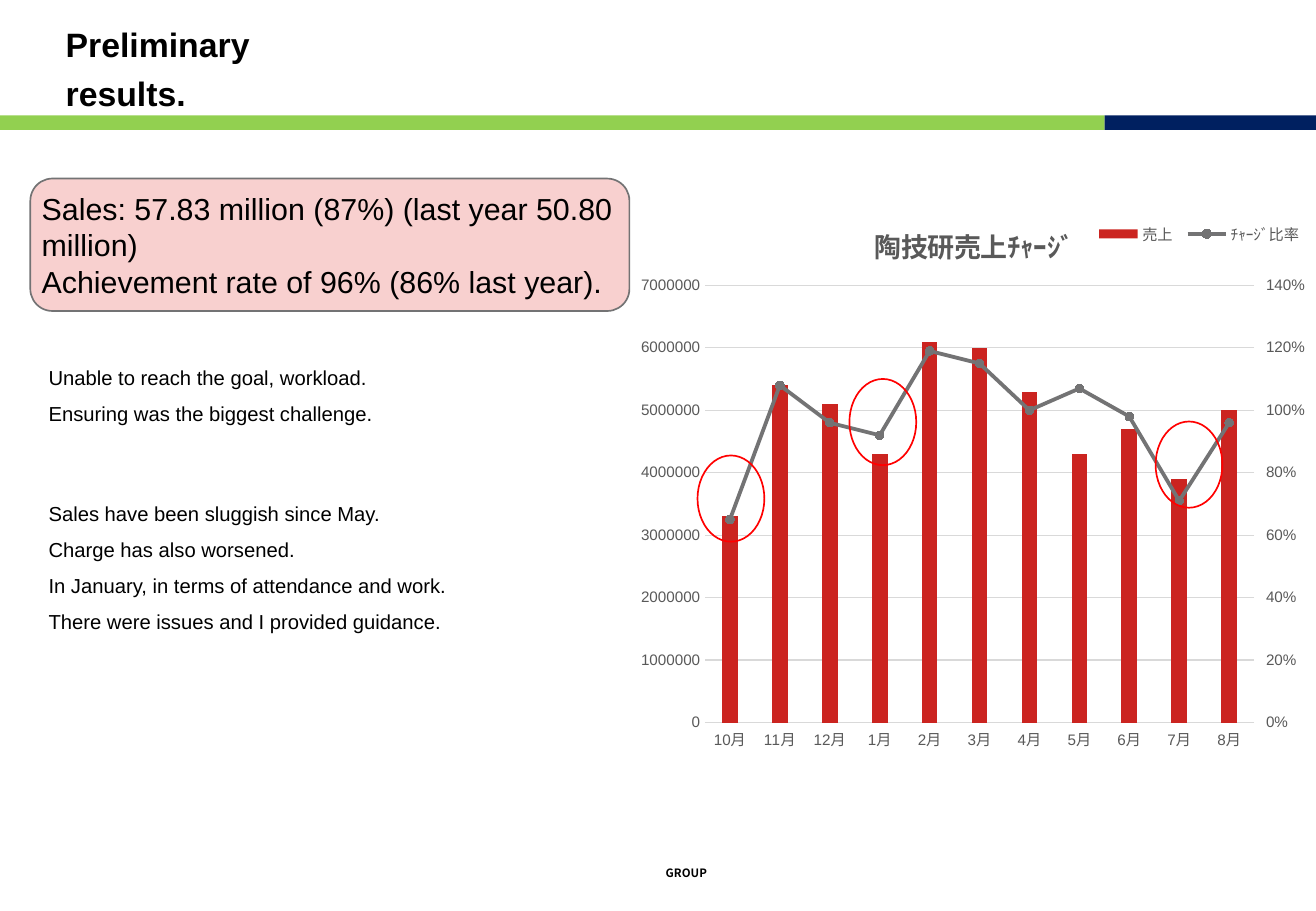
from pptx import Presentation
from pptx.chart.data import CategoryChartData
from pptx.dml.color import RGBColor
from pptx.enum.chart import XL_CHART_TYPE, XL_LEGEND_POSITION, XL_MARKER_STYLE, XL_TICK_MARK
from pptx.enum.shapes import MSO_SHAPE
from pptx.enum.text import MSO_ANCHOR, PP_ALIGN
from pptx.oxml import parse_xml
from pptx.oxml.ns import nsdecls, qn
from pptx.util import Inches, Pt

RECT, ROUND_RECT, ELLIPSE = MSO_SHAPE.RECTANGLE, MSO_SHAPE.ROUNDED_RECTANGLE, MSO_SHAPE.OVAL
TOP, MIDDLE, BOTTOM = MSO_ANCHOR.TOP, MSO_ANCHOR.MIDDLE, MSO_ANCHOR.BOTTOM
LEFT, JUSTIFY = PP_ALIGN.LEFT, PP_ALIGN.JUSTIFY
COLUMNS = XL_CHART_TYPE.COLUMN_CLUSTERED
CIRCLE = XL_MARKER_STYLE.CIRCLE
NO_TICK = XL_TICK_MARK.NONE
LEGEND_BOTTOM = XL_LEGEND_POSITION.BOTTOM

FONT, CJK_FONT = "Arial", "Noto Sans CJK JP"
BLACK, GRAY, LIGHT, DARK = "000000", "737374", "D9D9D9", "595959"
RED = "CB2420"

MONTHS = ["10月", "11月", "12月", "1月", "2月", "3月", "4月", "5月", "6月", "7月", "8月"]
SALES = [3300000, 5400000, 5100000, 4300000, 6100000, 6000000,
         5300000, 4300000, 4700000, 3900000, 5000000]
CHARGE = [0.65, 1.08, 0.96, 0.92, 1.19, 1.15, 1, 1.07, 0.98, 0.71, 0.96]

SUMMARY = ["Sales: 57.83 million (87%) (last year 50.80 million)",
           "Achievement rate of 96% (86% last year)."]
COMMENTS = ["Unable to reach the goal, workload.",
            "Ensuring was the biggest challenge.",
            "Sales have been sluggish since May.",
            "Charge has also worsened.",
            "In January, in terms of attendance and work.",
            "There were issues and I provided guidance."]
LOW_MONTHS = [(6.99, 3.12), (5.74, 3.75), (9.51, 3.47)]


def rgb(color):
    return RGBColor.from_string(color)


def style_font(font, size, color=BLACK, bold=False, name=FONT):
    font.name, font.size, font.bold = name, Pt(size), bold
    font.color.rgb = rgb(color)


def add_shape(s, kind, box, fill=None, line=None):
    sp = s.shapes.add_shape(kind, *map(Inches, box))
    sp.shadow.inherit = False
    if fill:
        sp.fill.solid()
        sp.fill.fore_color.rgb = rgb(fill)
    else:
        sp.fill.background()
    if line:
        sp.line.color.rgb = rgb(line)
        sp.line.width = Pt(1)
    else:
        sp.line.fill.background()
    return sp


def set_text(sp, lines, size, insets, anchor=TOP, align=LEFT, bold=False, name=FONT):
    tf = sp.text_frame
    tf.word_wrap = True
    tf.vertical_anchor = anchor
    tf.margin_left, tf.margin_top, tf.margin_right, tf.margin_bottom = map(Inches, insets)
    tf.text = "\n".join(lines)
    for p in tf.paragraphs:
        p.alignment = align
        for r in p.runs:
            style_font(r.font, size, BLACK, bold, name)
    return tf


def add_text(s, box, *args, **options):
    return set_text(s.shapes.add_textbox(*map(Inches, box)), *args, **options)


def manual_layout(x, y, w=None, h=None, inner=False):
    parts = '<c:layoutTarget val="inner"/>' if inner else ""
    parts += '<c:xMode val="edge"/><c:yMode val="edge"/>'
    for tag, value in zip("xywh", (x, y, w, h)):
        if value is not None:
            parts += f'<c:{tag} val="{value}"/>'
    return parse_xml(f'<c:layout {nsdecls("c")}><c:manualLayout>{parts}'
                     '</c:manualLayout></c:layout>')


def place(element, layout, after=None):
    for old in element.findall(qn("c:layout")):
        element.remove(old)
    if after is None:
        element.insert(0, layout)
    else:
        element.find(qn(after)).addnext(layout)


def move_to_right_axis(chart):
    """Turn the second series into a line on a percentage axis."""
    bars = chart.plots[0]._element
    ser = bars.findall(qn("c:ser"))[1]
    for bar_only in ser.findall(qn("c:invertIfNegative")):
        ser.remove(bar_only)
    line = parse_xml(
        f'<c:lineChart {nsdecls("c")}><c:grouping val="standard"/><c:varyColors val="0"/>'
        '<c:marker val="1"/><c:axId val="501"/><c:axId val="502"/></c:lineChart>')
    line.insert(2, ser)
    bars.addnext(line)
    cat_axis = parse_xml(
        f'<c:catAx {nsdecls("c")}><c:axId val="501"/><c:scaling/><c:delete val="1"/>'
        '<c:axPos val="b"/><c:crossAx val="502"/></c:catAx>')
    val_axis = parse_xml(
        f'<c:valAx {nsdecls("c", "a")}><c:axId val="502"/><c:scaling><c:max val="1.4"/>'
        '<c:min val="0"/></c:scaling><c:delete val="0"/><c:axPos val="r"/>'
        '<c:numFmt formatCode="0%" sourceLinked="0"/><c:majorTickMark val="out"/>'
        '<c:minorTickMark val="none"/><c:tickLblPos val="nextTo"/>'
        '<c:spPr><a:ln><a:noFill/></a:ln></c:spPr><c:txPr><a:bodyPr/><a:p><a:pPr>'
        f'<a:defRPr sz="900"><a:solidFill><a:srgbClr val="{DARK}"/></a:solidFill>'
        f'<a:latin typeface="{FONT}"/></a:defRPr></a:pPr></a:p></c:txPr>'
        '<c:crossAx val="501"/><c:crosses val="max"/><c:majorUnit val="0.2"/></c:valAx>')
    chart.value_axis._element.addnext(val_axis)
    val_axis.addnext(cat_axis)


def add_sales_chart(s, box):
    data = CategoryChartData()
    data.categories = MONTHS
    data.add_series("売上", SALES)
    data.add_series("ﾁｬｰｼﾞ比率", CHARGE, number_format="0%")
    chart = s.shapes.add_chart(COLUMNS, *map(Inches, box), data).chart
    style_font(chart.font, 10)

    # Left and bottom axes
    cat, val = chart.category_axis, chart.value_axis
    for axis in (cat, val):
        axis.major_tick_mark = axis.minor_tick_mark = NO_TICK
        style_font(axis.tick_labels.font, 9, DARK)
    val.minimum_scale, val.maximum_scale, val.major_unit = 0, 7000000, 1000000
    val.tick_labels.number_format = "0"
    val.tick_labels.number_format_is_linked = False
    val.format.line.fill.background()
    for line in (cat.format.line, val.major_gridlines.format.line):
        line.color.rgb = rgb(LIGHT)
        line.width = Pt(0.75)

    # Columns and line
    move_to_right_axis(chart)
    columns, line_plot = chart.plots
    columns.gap_width, columns.overlap = 219, -27
    columns.vary_by_categories = False
    sales, charge = columns.series[0], line_plot.series[0]
    sales.format.fill.solid()
    sales.format.fill.fore_color.rgb = rgb(RED)
    charge.smooth = False
    charge.format.line.color.rgb = rgb(GRAY)
    charge.format.line.width = Pt(2.25)
    charge.marker.style, charge.marker.size = CIRCLE, 5
    charge.marker.format.fill.solid()
    charge.marker.format.fill.fore_color.rgb = rgb(GRAY)
    charge.marker.format.line.color.rgb = rgb(GRAY)

    # Title, legend and plot area positions
    title = chart.chart_title
    title.text_frame.text = "陶技研売上ﾁｬｰｼﾞ"
    style_font(title.text_frame.paragraphs[0].runs[0].font, 16, DARK, True)
    place(title._element, manual_layout(0.35, 0.04), "c:tx")
    chart.has_legend = True
    chart.legend.position = LEGEND_BOTTOM
    chart.legend.include_in_layout = False
    style_font(chart.legend.font, 9, DARK)
    place(chart.legend._element, manual_layout(0.67, 0.04, 0.32, 0.05), "c:legendPos")
    plot_area = columns._element.getparent()
    place(plot_area, manual_layout(0.11, 0.15, 0.8, 0.72, inner=True))


def main():
    prs = Presentation()
    prs.slide_width, prs.slide_height = Inches(10.83), Inches(7.5)
    s = prs.slides.add_slide(prs.slide_layouts[6])

    # Header band and footer
    add_shape(s, RECT, (0, 0.95, 9.09, 0.12), "92D050")
    add_shape(s, RECT, (9.09, 0.95, 1.74, 0.12), "002060")
    add_text(s, (5.38, 7.08, 0.95, 0.21), ["GROUP"], 6.8, (0.1, 0.05, 0.1, 0.05),
             anchor=MIDDLE, align=JUSTIFY, bold=True, name=CJK_FONT)

    # Key figures
    summary = add_shape(s, ROUND_RECT, (0.25, 1.47, 4.93, 1.09), "F8D0CF", GRAY)
    set_text(summary, SUMMARY, 18, [0.04] * 4, anchor=MIDDLE)

    # Title
    tf = add_text(s, (0.54, 0.51, 2.29, 0.42), ["Preliminary results."], 20, [0] * 4,
                  anchor=BOTTOM, bold=True)
    tf.paragraphs[0].line_spacing = 1.2

    # Comments in two groups
    tf = add_text(s, (0.4, 2.9, 6.14, 4.43), COMMENTS, 12, (0, 0.07, 0.05, 0.07))
    for i, p in enumerate(tf.paragraphs):
        p.line_spacing = 1.2
        p.space_before = Pt({0: 0, 2: 40}.get(i, 2))
        p.space_after = Pt(2)

    # Chart with the weak months circled
    add_sales_chart(s, (5.18, 1.6, 5.65, 5))
    for x, y in LOW_MONTHS:
        add_shape(s, ELLIPSE, (x, y, 0.55, 0.71), line="FF0000")

    prs.save("out.pptx")


if __name__ == "__main__":
    main()
